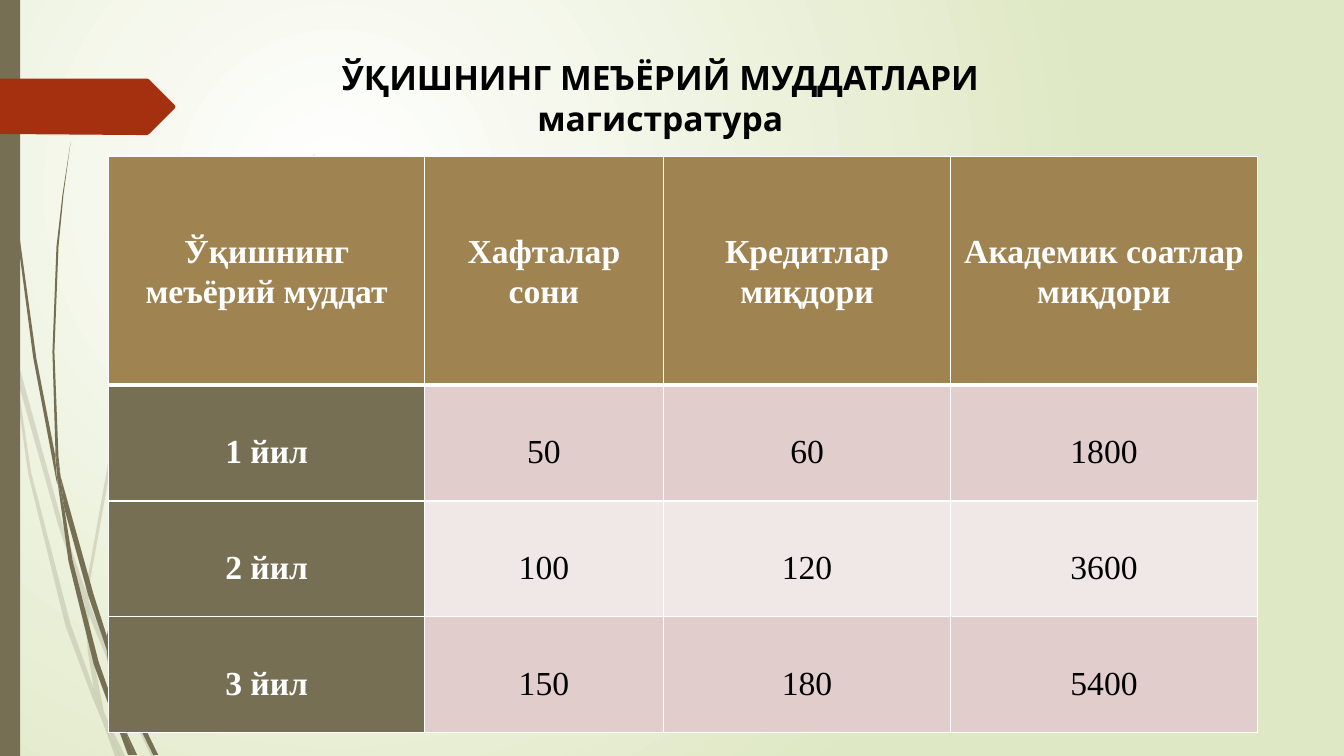
from typing import NamedTuple

from lxml.etree import SubElement
from pptx import Presentation
from pptx.dml.color import RGBColor
from pptx.enum.shapes import MSO_SHAPE
from pptx.enum.text import MSO_ANCHOR, PP_ALIGN
from pptx.oxml.ns import qn
from pptx.util import Inches, Pt

OLIVE, WHITE, BLACK = "766F54", "FFFFFF", "000000"
TAN, RUST, LEAF = "9F8351", "A53010", "DFE8C4"
PINK, PALE_PINK = "E1CDCC", "F0E8E7"
TITLE_FONT, TABLE_FONT = "League Spartan", "Times New Roman"

Outline = list[tuple[int, int]]  # points in hundredths of an inch


class GrassBlades(NamedTuple):
    color: str
    opacity: int
    outlines: list[Outline]


class CellStyle(NamedTuple):
    fill: str
    text: str
    bold: bool
    spacing: float


FAINT_BLADES = GrassBlades(OLIVE, 20, [
    [(11, 350), (9, 322), (0, 282), (0, 299), (10, 344)],
    [(58, 522), (84, 599), (85, 586), (62, 520), (14, 345), (17, 376)],
    [(92, 607), (88, 596), (88, 610), (123, 694), (150, 750), (155, 750), (127, 692)],
    [(119, 750), (124, 750), (105, 711)],
    [(93, 683), (70, 619), (31, 469), (17, 376), (11, 350), (28, 470), (65, 621),
     (92, 693), (101, 714), (99, 707)],
    [(84, 599), (87, 646), (93, 683), (96, 692), (105, 711), (103, 706), (91, 646),
     (88, 610), (88, 608)],
    [(88, 584), (110, 462), (160, 349), (229, 245), (268, 198), (290, 175), (312, 154),
     (312, 153), (289, 175), (268, 197), (228, 244), (158, 348), (107, 461), (85, 584),
     (85, 586), (88, 596)],
    [(101, 714), (114, 750), (119, 750)],
    [(88, 608), (88, 610), (88, 596), (85, 586), (84, 599)],
    [(96, 692), (93, 683), (99, 707), (101, 714), (119, 750), (105, 711)],
])
DARK_BLADES = GrassBlades(OLIVE, 100, [
    [(7, 110), (17, 233), (33, 355), (56, 477), (57, 481), (55, 457), (55, 453), (36, 355),
     (19, 232), (8, 109), (5, 48), (4, 0), (3, 0), (4, 48)],
    [(88, 592), (106, 645), (106, 633), (106, 631), (93, 590), (60, 472), (64, 505)],
    [(113, 649), (110, 641), (111, 656), (132, 708), (152, 749), (157, 749), (136, 706)],
    [(110, 691), (98, 657), (72, 556), (64, 505), (57, 477), (68, 557), (93, 659),
     (111, 708), (117, 722), (116, 717)],
    [(60, 472), (58, 453), (54, 349), (58, 245), (63, 193), (70, 141), (62, 193),
     (56, 245), (52, 349), (55, 449)],
    [(133, 749), (136, 749), (122, 719)],
    [(57, 477), (64, 505), (60, 472), (55, 449), (55, 453)],
    [(111, 633), (125, 552), (158, 476), (205, 406), (231, 374), (245, 359), (261, 344),
     (260, 344), (245, 358), (231, 373), (204, 405), (156, 474), (122, 551), (106, 631),
     (110, 641)],
    [(117, 722), (127, 749), (131, 749)],
    [(106, 645), (110, 691), (116, 706), (122, 719), (121, 716), (111, 656), (109, 651)],
    [(106, 645), (109, 651), (111, 656), (110, 641), (106, 631), (106, 633)],
    [(116, 706), (110, 691), (116, 717), (117, 722), (130, 749), (133, 749), (122, 719)],
])
ARROW: Outline = [(173, 108), (148, 133), (146, 134), (136, 134), (0, 133), (0, 78),
                  (146, 78), (148, 79), (173, 104), (174, 106)]

TITLE_LINES = ["ЎҚИШНИНГ МЕЪЁРИЙ МУДДАТЛАРИ", "магистратура"]
TABLE_ROWS = [
    ["Ўқишнинг меъёрий муддат", "Хафталар сони", "Кредитлар миқдори",
     "Академик соатлар миқдори"],
    ["1 йил", "50", "60", "1800"],
    ["2 йил", "100", "120", "3600"],
    ["3 йил", "150", "180", "5400"],
]
COLUMN_WIDTHS = [3.13, 2.37, 2.85, 3.04]
ROW_HEIGHTS = [2.27, 1.15, 1.15, 1.15]


def rgb(color: str) -> RGBColor:
    return RGBColor.from_string(color)


def paint(shape, color: str, opacity: int = 100) -> None:
    """Give a shape a plain fill, with no line and no shadow."""
    shape.shadow.inherit = False
    shape.line.fill.background()
    shape.fill.solid()
    shape.fill.fore_color.rgb = rgb(color)
    if opacity < 100:
        color_element = shape.fill._xPr.find(qn("a:solidFill"))[0]
        SubElement(color_element, qn("a:alpha"), val=str(opacity * 1000))


def draw_outline(shapes, outline: Outline, color: str, opacity: int = 100) -> None:
    builder = shapes.build_freeform(*outline[0], scale=Inches(0.01))
    builder.add_line_segments(outline[1:], close=True)
    paint(builder.convert_to_shape(), color, opacity)


def draw_blades(slide, blades: GrassBlades) -> None:
    group = slide.shapes.add_group_shape()
    for outline in blades.outlines:
        draw_outline(group.shapes, outline, blades.color, blades.opacity)


def fill_background(slide) -> None:
    """Spread a round gradient from the upper left of the slide."""
    fill = slide.background.fill
    fill.gradient()
    for stop, color, position in zip(fill.gradient_stops, (WHITE, LEAF), (0, 1)):
        stop.color.rgb = rgb(color)
        stop.position = position
    gradient = slide.background._cSld.find(".//" + qn("a:gradFill"))
    gradient.remove(gradient.find(qn("a:lin")))
    path = SubElement(gradient, qn("a:path"), path="circle")
    SubElement(path, qn("a:fillToRect"), l="50000", t="50000", r="100000", b="100000")


def add_text(paragraph, text: str, font: str, color: str, bold: bool) -> None:
    """Add a centred 24-point run."""
    paragraph.alignment = PP_ALIGN.CENTER
    run = paragraph.add_run()
    run.text = text
    run.font.size = Pt(24)
    run.font.name = font
    run.font.bold = bold
    run.font.color.rgb = rgb(color)


def set_border(cell, side: str, width: float) -> None:
    line = SubElement(cell._tc.get_or_add_tcPr(), qn(f"a:ln{side}"), w=str(Pt(width)))
    SubElement(SubElement(line, qn("a:solidFill")), qn("a:srgbClr"), val=WHITE)


def cell_style(row: int, column: int) -> CellStyle:
    if row == 0:
        return CellStyle(TAN, WHITE, True, 1.07)
    if column == 0:
        return CellStyle(OLIVE, WHITE, True, 1.5)
    return CellStyle(PINK if row % 2 else PALE_PINK, BLACK, False, 1.5)


def format_cell(cell, text: str, row: int, column: int) -> None:
    style = cell_style(row, column)
    for side in "LRTB":
        under_header = (row, side) in ((0, "B"), (1, "T"))
        set_border(cell, side, 3 if under_header else 1)
    cell.fill.solid()
    cell.fill.fore_color.rgb = rgb(style.fill)
    cell.vertical_anchor = MSO_ANCHOR.MIDDLE
    cell.margin_left = cell.margin_right = Inches(0.07)
    cell.margin_top = cell.margin_bottom = 0
    paragraph = cell.text_frame.paragraphs[0]
    paragraph.line_spacing = style.spacing
    add_text(paragraph, text, TABLE_FONT, style.text, style.bold)


def draw_table(slide) -> None:
    table = slide.shapes.add_table(
        len(ROW_HEIGHTS), len(COLUMN_WIDTHS), Inches(1.08), Inches(1.55),
        Inches(sum(COLUMN_WIDTHS)), Inches(sum(ROW_HEIGHTS))).table
    for column, width in zip(table.columns, COLUMN_WIDTHS):
        column.width = Inches(width)
    for row, height in zip(table.rows, ROW_HEIGHTS):
        row.height = Inches(height)
    for row, texts in enumerate(TABLE_ROWS):
        for column, text in enumerate(texts):
            format_cell(table.cell(row, column), text, row, column)


def draw_title(slide) -> None:
    box = slide.shapes.add_textbox(Inches(2.73), Inches(0.52), Inches(7.64), Inches(0.91))
    frame = box.text_frame
    frame.word_wrap = True
    for index, text in enumerate(TITLE_LINES):
        paragraph = frame.add_paragraph() if index else frame.paragraphs[0]
        add_text(paragraph, text, TITLE_FONT, BLACK, True)


def main() -> None:
    presentation = Presentation()
    presentation.slide_width = Inches(13.33)
    presentation.slide_height = Inches(7.5)
    slide = presentation.slides.add_slide(presentation.slide_layouts[6])
    fill_background(slide)
    draw_blades(slide, FAINT_BLADES)
    draw_blades(slide, DARK_BLADES)
    side_bar = slide.shapes.add_shape(MSO_SHAPE.RECTANGLE, 0, 0, Inches(0.2), Inches(7.5))
    paint(side_bar, OLIVE)
    draw_outline(slide.shapes, ARROW, RUST)
    draw_table(slide)
    draw_title(slide)
    presentation.save("out.pptx")


if __name__ == "__main__":
    main()
